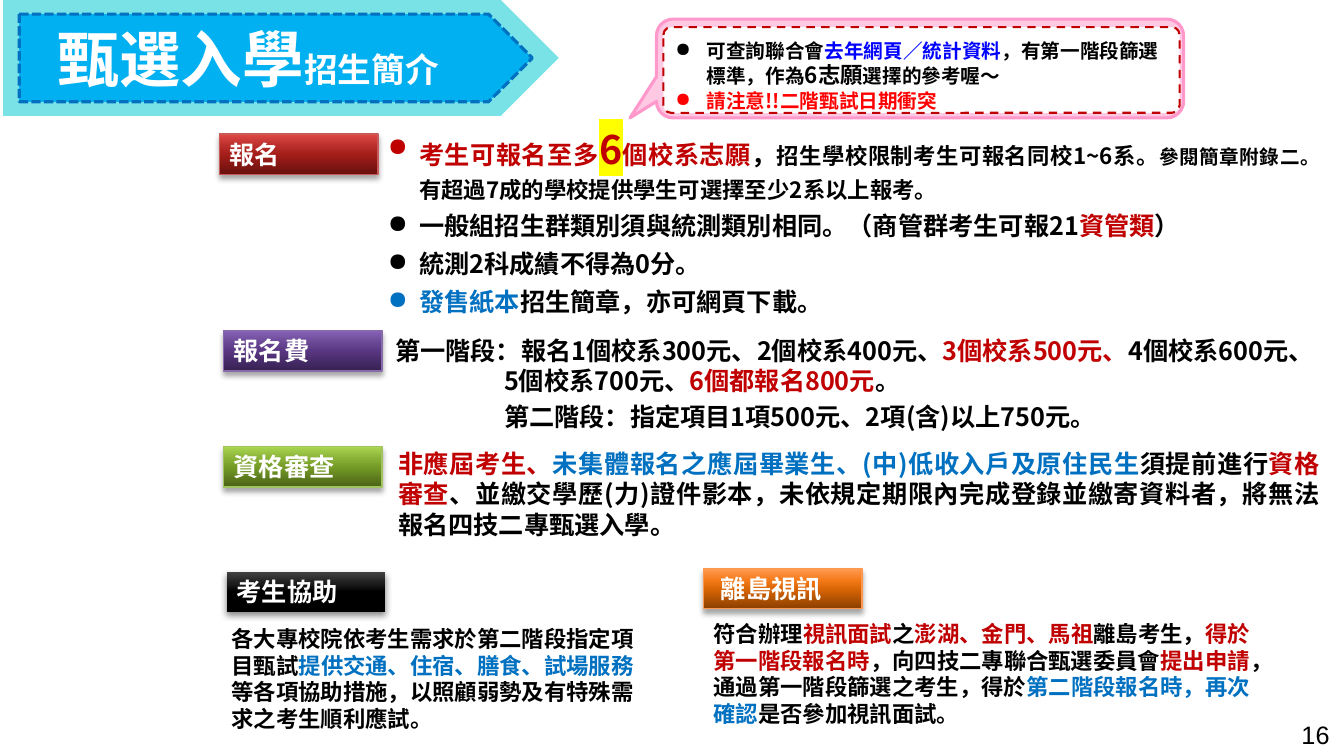
"""Build the slide that introduces enrolment by selection."""
from lxml import etree
from pptx import Presentation
from pptx.dml.color import RGBColor
from pptx.enum.dml import MSO_LINE
from pptx.enum.shapes import MSO_SHAPE
from pptx.enum.text import PP_ALIGN
from pptx.oxml.ns import qn
from pptx.util import Inches, Pt

PENTAGON, RECTANGLE = MSO_SHAPE.PENTAGON, MSO_SHAPE.RECTANGLE
ROUNDED, CALLOUT = MSO_SHAPE.ROUNDED_RECTANGLE, MSO_SHAPE.ROUNDED_RECTANGULAR_CALLOUT
LEFT, JUSTIFY = PP_ALIGN.LEFT, PP_ALIGN.JUSTIFY
DASH, SQUARE_DOT = MSO_LINE.DASH, MSO_LINE.SQUARE_DOT

THEME = {
    "font": "Noto Sans CJK SC", "number font": "Arial",
    "black": "000000", "white": "FFFFFF", "red": "C00000", "blue": "0070C0",
    "link": "0000FF", "alert": "FF0000", "marker": "FFFF00",
    "aqua": "79E2E7", "sky": "00B0F0", "pink": "FFC9E4", "rose": "FF99CC",
    "title": 44, "subtitle": 24, "digit": 28, "head": 18, "text": 16, "note": 14,
}

deck = Presentation()
deck.slide_width, deck.slide_height = Inches(13.33), Inches(7.5)
page = deck.slides.add_slide(deck.slide_layouts[6])
COLUMN, ROW = deck.slide_width / 100, deck.slide_height / 100


def add_box(area, kind=None, fill=None, line=None, width=0, dash=None):
    """Add a shape, or a text box when no kind is given, on the percent grid."""
    x, y, w, h = area
    spot = [int(n) for n in (x * COLUMN, y * ROW, w * COLUMN, h * ROW)]
    if kind is None:
        box = page.shapes.add_textbox(*spot)
    else:
        box = page.shapes.add_shape(kind, *spot)
        box.shadow.inherit = False
        if fill:
            box.fill.solid()
            box.fill.fore_color.rgb = RGBColor.from_string(fill)
        if line:
            box.line.color.rgb = RGBColor.from_string(line)
            box.line.width = Pt(width)
            box.line.dash_style = dash
        else:
            box.line.fill.background()
    box.text_frame.word_wrap = True
    return box


def write(box, paragraphs, size="head", color="black", align=LEFT, pitch=None,
          gap=0, indent=(0, 0), bullet=False, font="font", bold=True):
    """Fill a box; a span is (text, color, size, highlight), the last three optional."""
    for index, spans in enumerate(paragraphs):
        frame = box.text_frame
        para = frame.add_paragraph() if index else frame.paragraphs[0]
        para.alignment = align
        if pitch:
            para.line_spacing = Pt(pitch)
        if index:
            para.space_before = Pt(gap)
        props = para._p.get_or_add_pPr()
        hanging = bullet or index == 0
        props.set("marL", str(Inches(indent[0])))
        props.set("indent", str(Inches(indent[1]) if hanging else 0))
        if bullet:
            etree.SubElement(props, qn("a:buChar")).set("char", "●")
        for text, *style in spans:
            tint, points, marker = style + [color, size, None][len(style):]
            span = para.add_run()
            span.text = text
            span.font.size = Pt(THEME[points])
            span.font.bold = bold
            span.font.color.rgb = RGBColor.from_string(THEME[tint])
            span.font.name = THEME[font]
            latin = span.font._element.find(qn("a:latin"))
            asian = etree.Element(qn("a:ea"))
            asian.set("typeface", THEME[font])
            latin.addnext(asian)
            if marker:
                glow = etree.Element(qn("a:highlight"))
                etree.SubElement(glow, qn("a:srgbClr")).set("val", THEME[marker])
                latin.addprevious(glow)


write(add_box((96.1, 94.53, 3.9, 5.33)), [[("16",)]], font="number font", bold=False)

add_box((0.23, 0, 41.34, 15.33), PENTAGON, THEME["aqua"])
banner = add_box((1.43, 1.87, 38.18, 11.6), PENTAGON, THEME["sky"], THEME["blue"], 2.25, SQUARE_DOT)
banner.text_frame.margin_left = Inches(0.38)
write(banner, [[("甄選入學",), ("招生簡介", "white", "subtitle")]], "title", "white")

write(add_box((28.13, 18.13, 70.82, 22)), [
    [("考生可報名至多", "red"), ("6", "red", "digit", "marker"), ("個校系志願", "red"), ("，",),
     ("招生學校限制考生可報名同校1~6系。", "black", "text"), ("參閱簡章附錄二。", "black", "note"),
     ("有超過7成的學校提供學生可選擇至少2系以上報考。", "black", "text")],
    [("一般組招生群類別須與統測類別相同。（商管群考生可報21",), ("資管類", "red"), ("）",)],
    [("統測2科成績不得為0分。",)],
    [("發售紙本", "blue"), ("招生簡章，亦可網頁下載。",)],
], align=JUSTIFY, pitch=21.6, gap=5.5, indent=(0.31, -0.31), bullet=True)

labels = [
    ("報名", 16.35, 17.73, ["68100E", "A41E1A", "B92E2A", "DF4845"], "C95956"),
    ("報名費", 16.65, 43.73, ["372152", "593782", "6A4895", "8763B7"], "876BAA"),
    ("資格審查", 16.65, 59.07, ["4A6316", "769C27", "89B137", "A9D651"], "A1C360"),
    ("考生協助", 16.88, 75.6, ["000000", "000000", "1D1D1D", "424242"], None),
    ("離島視訊", 52.36, 75.2, ["8B3F00", "DA6606", "F47917", "FF9C54"], "FF984E"),
]
for name, x, y, shades, edge in labels:
    label = add_box((x, y, 11.78, 5.33), RECTANGLE, line=edge, width=1)
    label.fill.gradient()
    label.fill.gradient_angle = 90
    stops = label._element.spPr.find(qn("a:gradFill")).find(qn("a:gsLst"))
    for stop in list(stops):
        stops.remove(stop)
    for share, shade in zip((0, 50, 70, 100), shades):
        stop = etree.SubElement(stops, qn("a:gs"))
        stop.set("pos", str(share * 1000))
        etree.SubElement(stop, qn("a:srgbClr")).set("val", shade)
    blur, opacity = (4, 35) if edge else (5, 45)
    effects = label._element.spPr.find(qn("a:effectLst"))
    shadow = etree.SubElement(effects, qn("a:outerShdw"))
    for key, value in (("blurRad", Pt(blur)), ("dist", Pt(3)), ("dir", 90 * 60000), ("rotWithShape", 0)):
        shadow.set(key, str(value))
    shade = etree.SubElement(shadow, qn("a:srgbClr"))
    shade.set("val", THEME["black"])
    etree.SubElement(shade, qn("a:alpha")).set("val", str(opacity * 1000))
    if name == "離島視訊":
        label.text_frame.margin_left = Inches(0.17)
    write(label, [[(name,)]], color="white", align=JUSTIFY, pitch=21.6)

write(add_box((28.66, 43.73, 68.49, 14.27)), [
    [("第一階段：報名1個校系300元、2個校系400元、",), ("3個校系500元、", "red"),
     ("4個校系600元、5個校系700元、",), ("6個都報名800元", "red"), ("。",)],
    [("第二階段：指定項目1項500元、2項(含)以上750元。",)],
], pitch=21.6, gap=3.6, indent=(1.08, -1.08))

write(add_box((28.88, 58.67, 70.07, 12.27)), [
    [("非應屆考生、", "red"), ("未集體報名之應屆畢業生、(中)低收入戶及原住民生", "blue"),
     ("須提前進行",), ("資格審查", "red"),
     ("、並繳交學歷(力)證件影本，未依規定期限內完成登錄並繳寄資料者，將無法報名四技二專甄選入學。",)],
], align=JUSTIFY, pitch=21.6)

write(add_box((16.5, 82, 32.33, 15.73)), [
    [("各大專校院依考生需求於第二階段指定項目甄試",), ("提供交通、住宿、膳食、試場服務", "blue"),
     ("等各項協助措施，以照顧弱勢及有特殊需求之考生順利應試。",)],
], "text", pitch=19.2)

write(add_box((52.36, 81.33, 42.54, 15.73)), [
    [("符合辦理",), ("視訊面試", "red"), ("之",), ("澎湖、金門、馬祖", "red"), ("離島考生，",),
     ("得於第一階段報名時", "red"), ("，向四技二專聯合甄選委員會",), ("提出申請", "red"),
     ("，通過第一階段篩選之考生，得於",), ("第二階段報名時，再次確認", "blue"), ("是否參加視訊面試。",)],
], "text", pitch=19.2)

bubble = add_box((48.84, 2.53, 39.23, 13.07), CALLOUT, THEME["pink"], THEME["rose"], 2.25)
for index, value in enumerate((-0.55, 0.5, 0.17)):
    bubble.adjustments[index] = value
panel = add_box((49.36, 3.6, 38.41, 11.33), ROUNDED, THEME["white"], THEME["red"], 1.5, DASH)
panel.adjustments[0] = 0.09
write(add_box((49.51, 4.27, 38.41, 11.2)), [
    [("可查詢聯合會",), ("去年網頁／統計資料", "link"), ("，有第一階段篩選標準，作為",),
     ("6志願", "black", "text"), ("選擇的參考喔～",)],
    [("請注意!!二階甄試日期衝突", "alert")],
], "note", pitch=18, indent=(0.31, -0.31), bullet=True)

deck.save("out.pptx")
